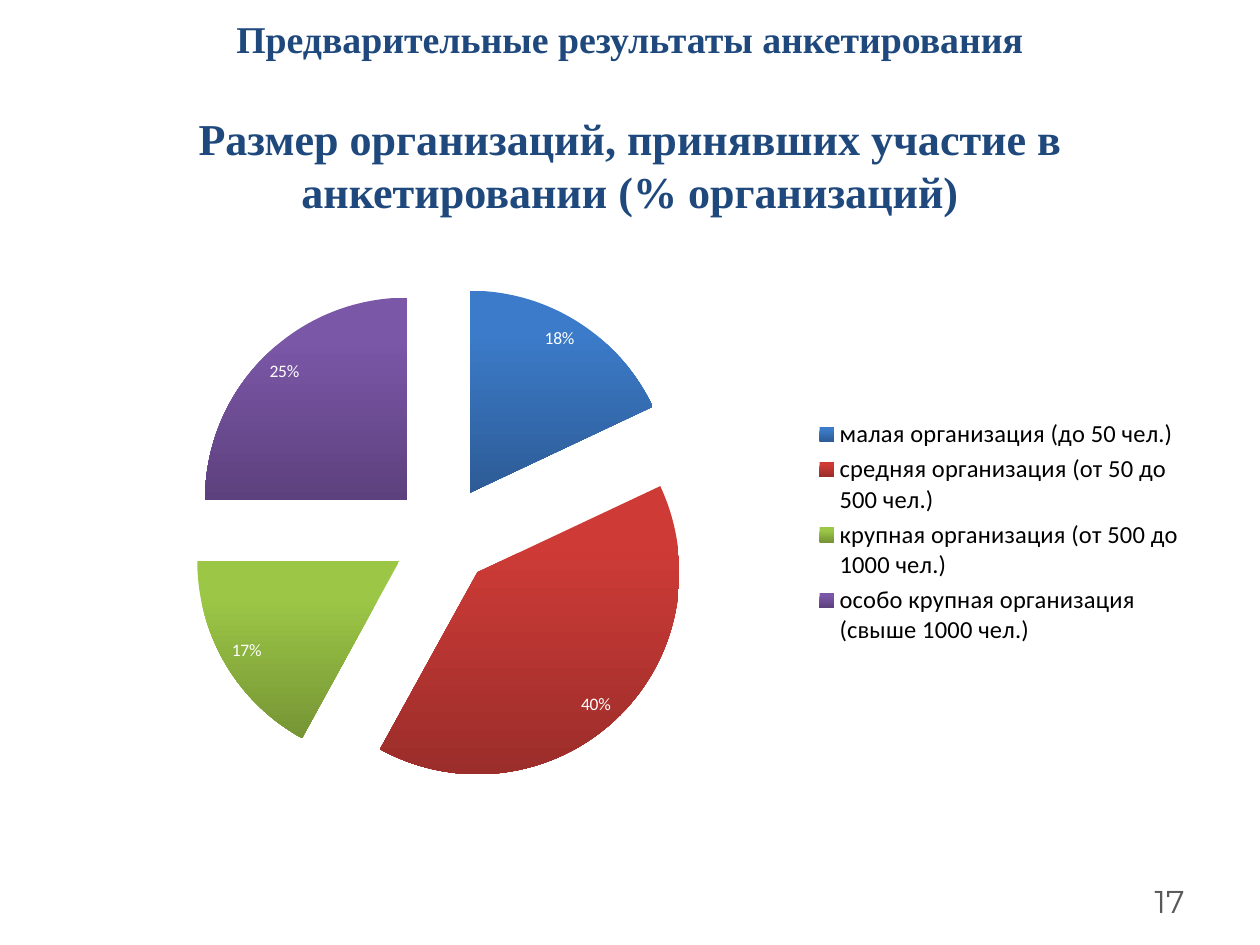
from dataclasses import dataclass

import pptx
import pptx.chart.data
import pptx.dml.color
import pptx.enum.chart
import pptx.enum.text
import pptx.oxml
import pptx.oxml.ns
import pptx.util
from pptx.util import Pt

COLOURS = {
    "heading": "1F497D",
    "page": "595959",
    "legend": "000000",
    "label": "FFFFFF",
}
PLOT_AREA = {"x": 0.06, "y": 0.1, "w": 0.55, "h": 0.81}
EXPLOSION = 25


@dataclass
class Line:
    text: str
    size: float
    font: str
    colour: str
    bold: bool = False
    space_before: float = 0


@dataclass
class Slice:
    category: str
    percent: int
    top_colour: str
    bottom_colour: str


HEADING = [
    Line("Предварительные результаты анкетирования", 21.6,
         "Times New Roman", COLOURS["heading"], True),
    Line("Размер организаций, принявших участие в анкетировании (% организаций)",
         25.2, "Times New Roman", COLOURS["heading"], True, 29),
]
PAGE_NUMBER = [Line("17", 18, "Montserrat", COLOURS["page"])]

SLICES = [
    Slice("малая организация (до 50 чел.)", 18, "3C7BC9", "2D5C97"),
    Slice("средняя организация (от 50 до 500 чел.)", 40, "CE3B37", "9B2D2A"),
    Slice("крупная организация (от 500 до 1000 чел.)", 17, "9CC746", "769535"),
    Slice("особо крупная организация (свыше 1000 чел.)", 25, "7B57A8", "5D417E"),
]


def rgb(colour: str) -> pptx.dml.color.RGBColor:
    return pptx.dml.color.RGBColor.from_string(colour)


def add_lines(slide, box: tuple, lines: list[Line], align) -> None:
    """Put each line in its own paragraph of a vertically centred text box."""
    frame = slide.shapes.add_textbox(*map(Pt, box)).text_frame
    frame.word_wrap = True
    frame.vertical_anchor = pptx.enum.text.MSO_ANCHOR.MIDDLE
    for index, line in enumerate(lines):
        paragraph = frame.add_paragraph() if index else frame.paragraphs[0]
        paragraph.alignment = align
        paragraph.space_before = Pt(line.space_before)
        run = paragraph.add_run()
        run.text = line.text
        run.font.size = Pt(line.size)
        run.font.name = line.font
        run.font.bold = line.bold
        run.font.color.rgb = rgb(line.colour)


def set_plot_layout(chart) -> None:
    """Fix the inner plot area as fractions of the chart."""
    plot_area = chart._chartSpace.chart.plotArea
    for old_layout in plot_area.findall(pptx.oxml.ns.qn("c:layout")):
        plot_area.remove(old_layout)
    modes = '<c:xMode val="edge"/><c:yMode val="edge"/>'
    sizes = "".join(f'<c:{side} val="{value}"/>' for side, value in PLOT_AREA.items())
    plot_area.insert(0, pptx.oxml.parse_xml(
        f'<c:layout {pptx.oxml.ns.nsdecls("c")}><c:manualLayout>'
        f'<c:layoutTarget val="inner"/>{modes}{sizes}</c:manualLayout></c:layout>'))


def explode(series) -> None:
    explosion = pptx.oxml.parse_xml(
        f'<c:explosion {pptx.oxml.ns.nsdecls("c")} val="{EXPLOSION}"/>')
    series._element.find(pptx.oxml.ns.qn("c:tx")).addnext(explosion)


def shade(point, part: Slice) -> None:
    """Fill a pie slice from its top colour down to its bottom colour."""
    fill = point.format.fill
    fill.gradient()
    fill.gradient_angle = 270
    top, bottom = fill.gradient_stops
    top.color.rgb, top.position = rgb(part.top_colour), 0.2
    bottom.color.rgb, bottom.position = rgb(part.bottom_colour), 1
    point.format.line.fill.background()


def add_pie(slide, box: tuple, slices: list[Slice]) -> None:
    sizes = pptx.chart.data.CategoryChartData()
    sizes.categories = [part.category for part in slices]
    sizes.add_series("Series 1", [part.percent for part in slices])
    chart = slide.shapes.add_chart(
        pptx.enum.chart.XL_CHART_TYPE.PIE, *map(Pt, box), sizes).chart
    chart.has_title = False
    chart.font.name = "Calibri"
    chart.font.size = Pt(10)
    chart.has_legend = True
    chart.legend.position = pptx.enum.chart.XL_LEGEND_POSITION.RIGHT
    chart.legend.include_in_layout = False
    chart.legend.font.size = Pt(14)
    chart.legend.font.name = "Calibri"
    chart.legend.font.color.rgb = rgb(COLOURS["legend"])
    set_plot_layout(chart)

    pie = chart.plots[0]
    pie.vary_by_categories = True
    series = pie.series[0]
    explode(series)
    for index, part in enumerate(slices):
        shade(series.points[index], part)
    labels = series.data_labels
    labels.show_percentage = True
    labels.show_value = False
    labels.number_format = "0%"
    labels.number_format_is_linked = False
    labels.position = pptx.enum.chart.XL_LABEL_POSITION.INSIDE_END
    labels.font.size = Pt(10)
    labels.font.name = "Calibri"
    labels.font.color.rgb = rgb(COLOURS["label"])


def main() -> None:
    deck = pptx.Presentation()
    deck.slide_width, deck.slide_height = Pt(720), Pt(540)
    slide = deck.slides.add_slide(deck.slide_layouts[6])
    align = pptx.enum.text.PP_ALIGN
    add_lines(slide, (36, 21.6, 648, 90), HEADING, align.CENTER)
    add_lines(slide, (516, 500.4, 168, 28.8), PAGE_NUMBER, align.RIGHT)
    add_pie(slide, (36, 126, 648, 356.4), SLICES)
    deck.save("out.pptx")


if __name__ == "__main__":
    main()
